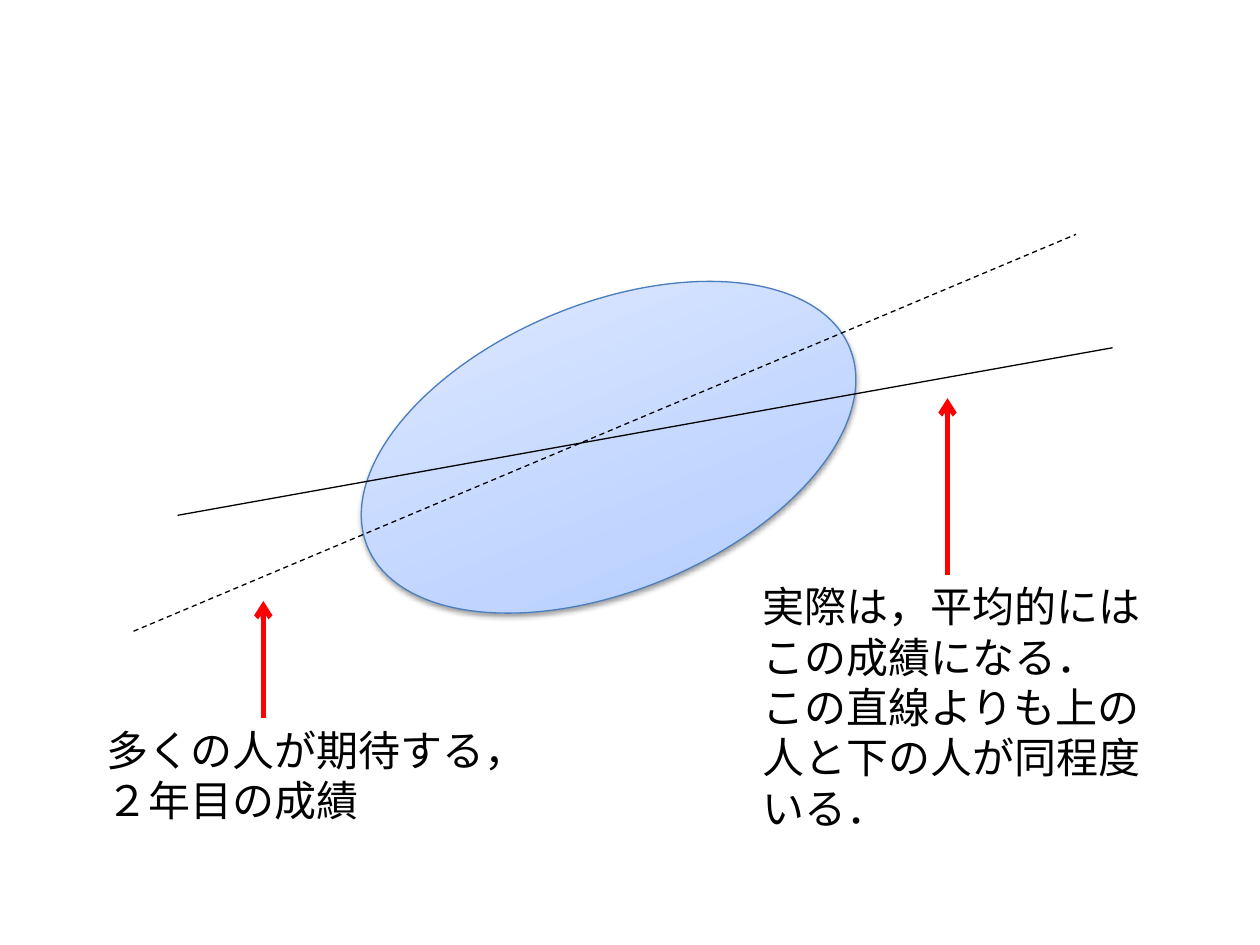
import copy

import pptx
import pptx.util
import pptx.dml.color
import pptx.enum.dml
import pptx.enum.shapes
import pptx.enum.text
import pptx.oxml
import pptx.oxml.ns

NS = pptx.oxml.ns.nsdecls("a")
SHADOW = (
    f'<a:effectLst {NS}><a:outerShdw blurRad="39370" dist="20320" dir="5400000" rotWithShape="0">'
    '<a:srgbClr val="000000"><a:alpha val="38000"/></a:srgbClr></a:outerShdw></a:effectLst>'
)


def color(hex_string):
    return pptx.dml.color.RGBColor.from_string(hex_string)


class Board:
    """Draws on one slide; lengths are columns and rows of a 0.1 inch grid."""

    unit = 0.1
    text_format = {"name": "Calibri", "size": pptx.util.Pt(24)}
    ink = "000000"

    def __init__(self, slide):
        self.slide = slide

    def grid(self, *cells):
        return [pptx.util.Inches(c * self.unit) for c in cells]

    def stroke(self, line, hex_string, width, dash=None):
        line.color.rgb = color(hex_string)
        for name, value in {"width": pptx.util.Pt(width), "dash_style": dash}.items():
            setattr(line, name, value)

    def ellipse(self, box, rotation, stops, outline):
        sp = self.slide.shapes.add_shape(pptx.enum.shapes.MSO_SHAPE.OVAL, *self.grid(*box))
        sp.rotation = rotation
        sp.fill.gradient()
        sp.fill.gradient_angle = 90
        last = sp.fill.gradient_stops[1]._gs
        last.addprevious(copy.deepcopy(last))  # room for a middle stop
        for stop, (position, hex_string) in zip(sp.fill.gradient_stops, stops):
            stop.color.rgb = color(hex_string)
            stop.position = position
        self.stroke(sp.line, outline, 0.75)
        sp._element.spPr.append(pptx.oxml.parse_xml(SHADOW))

    def line(self, start, end, hex_string=ink, width=0.75, dash=None, arrow=False):
        cx = self.slide.shapes.add_connector(
            pptx.enum.shapes.MSO_CONNECTOR.STRAIGHT, *self.grid(*start, *end))
        self.stroke(cx.line, hex_string, width, dash)
        if arrow:
            cx.line._get_or_add_ln().append(
                pptx.oxml.parse_xml(f'<a:tailEnd {NS} type="arrow"/>'))
        cx._element.spPr.append(pptx.oxml.parse_xml(f"<a:effectLst {NS}/>"))

    def text(self, box, paragraphs):
        tf = self.slide.shapes.add_textbox(*self.grid(*box)).text_frame
        tf.word_wrap = True
        tf.auto_size = pptx.enum.text.MSO_AUTO_SIZE.SHAPE_TO_FIT_TEXT
        for i, words in enumerate(paragraphs):
            p = tf.add_paragraph() if i else tf.paragraphs[0]
            r = p.add_run()
            r.text = words
            r.font.color.rgb = color(self.ink)
            for name, value in self.text_format.items():
                setattr(r.font, name, value)


def main():
    prs = pptx.Presentation()
    prs.slide_width, prs.slide_height = pptx.util.Inches(10), pptx.util.Inches(7.5)
    board = Board(prs.slides.add_slide(prs.slide_layouts[6]))

    # Cloud of scores
    board.ellipse((27.6, 24.1, 41.4, 22.8), 337.6,
                  [(0, "A4C4FF"), (0.35, "BFD4FF"), (1, "E6EEFF")], "4B7EBC")

    # Expected trend (dashed) and actual regression line
    board.line((10.6, 50.1), (85.4, 18.6), dash=pptx.enum.dml.MSO_LINE.DASH)
    board.line((14.1, 40.9), (88.3, 27.6))

    # Captions, each with an arrow rising from its top edge to a line
    captions = [
        ((7.5, 57, 34.6, 9.1), 20.9, 47.7, ["多くの人が期待する，２年目の成績"]),
        ((59.5, 45.6, 32.2, 21.2), 75.2, 31.6,
         ["実際は，平均的にはこの成績になる．", "この直線よりも上の人と下の人が同程度いる．"]),
    ]
    for box, x, tip, paragraphs in captions:
        board.text(box, paragraphs)
        board.line((x, box[1]), (x, tip), "FF0000", 3, arrow=True)

    prs.save("out.pptx")


if __name__ == "__main__":
    main()
